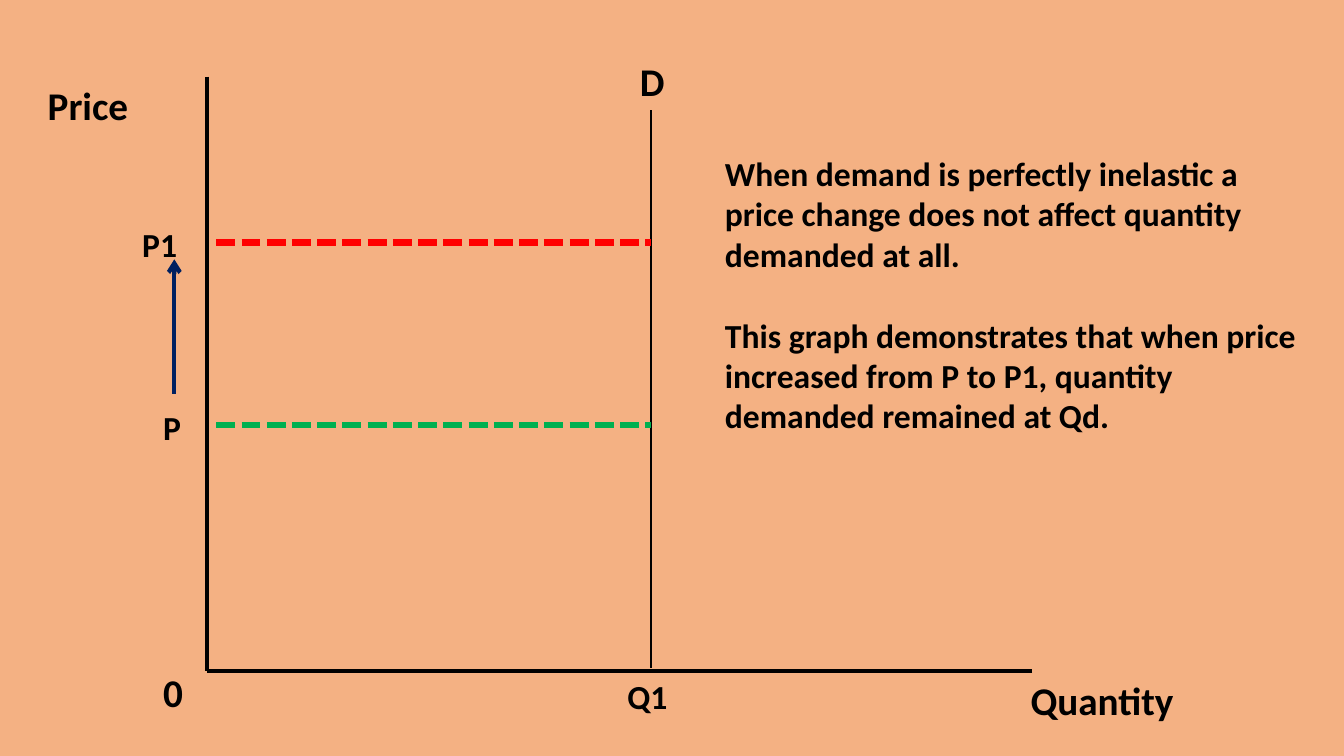
from lxml.etree import SubElement
from pptx import Presentation
from pptx.dml.color import RGBColor
from pptx.enum.dml import MSO_LINE
from pptx.enum.shapes import MSO_CONNECTOR
from pptx.enum.text import MSO_AUTO_SIZE
from pptx.oxml.ns import qn
from pptx.util import Pt

EMU_PER_PX = 9525  # slide is 1280 x 720 px

PEACH = RGBColor(0xF4, 0xB1, 0x83)
BLACK = RGBColor(0x00, 0x00, 0x00)
RED = RGBColor(0xFF, 0x00, 0x00)
GREEN = RGBColor(0x00, 0xB0, 0x50)
NAVY = RGBColor(0x00, 0x20, 0x60)

# Shared graph coordinates
AXIS_X, AXIS_Y = 197, 639
DEMAND_X = 620


def px(*lengths):
    return [length * EMU_PER_PX for length in lengths]


def add_line(slide, start, end, color, width, dash=None, arrow=False):
    connector = slide.shapes.add_connector(MSO_CONNECTOR.STRAIGHT, *px(*start, *end))
    line = connector.line
    line.color.rgb = color
    line.width = Pt(width)
    if dash:
        line.dash_style = dash
    if arrow:
        SubElement(line._get_or_add_ln(), qn("a:tailEnd"), type="arrow")
    SubElement(connector._element.spPr, qn("a:effectLst"))


def add_text(slide, box, paragraphs, size, gap=0):
    frame = slide.shapes.add_textbox(*px(*box)).text_frame
    frame.word_wrap = True
    frame.auto_size = MSO_AUTO_SIZE.SHAPE_TO_FIT_TEXT
    frame.text = "\n".join(paragraphs)
    for index, paragraph in enumerate(frame.paragraphs):
        font = paragraph.font
        font.name, font.size, font.bold = "Calibri", Pt(size), True
        font.color.rgb = BLACK
        if index:
            paragraph.space_before = Pt(gap)


def main():
    prs = Presentation()
    prs.slide_width, prs.slide_height = px(1280, 720)
    slide = prs.slides.add_slide(prs.slide_layouts[6])
    background = slide.background.fill
    background.solid()
    background.fore_color.rgb = PEACH

    # Axes and demand curve
    add_line(slide, (AXIS_X, 73), (AXIS_X, AXIS_Y), BLACK, 2.5)
    add_line(slide, (983, AXIS_Y), (AXIS_X, AXIS_Y), BLACK, 2.5)
    add_line(slide, (DEMAND_X, 105), (DEMAND_X, 636), BLACK, 2)

    # Price levels and the rise between them
    for level, color in ((231, RED), (405, GREEN)):
        add_line(slide, (206, level), (DEMAND_X, level), color, 4.5,
                 dash=MSO_LINE.SQUARE_DOT)
    add_line(slide, (166, 375), (166, 247), NAVY, 3, arrow=True)

    # Axis and curve labels
    for label, left, top, width in (
        ("Price", 36, 73, 151),
        ("Quantity", 972, AXIS_Y, 282),
        ("0", 146, 632, 40),
        ("D", 600, 50, 90),
    ):
        add_text(slide, (left, top, width, 55), [label], 28)

    # Price and quantity point labels
    for label, left, top, width in (
        ("P1", 126, 209, 70),
        ("P", 146, 383, 50),
        ("Q1", 588, AXIS_Y, 101),
    ):
        add_text(slide, (left, top, width, 48), [label], 24)

    # Explanation
    add_text(slide, (681, 141, 564, 281), [
        "When demand is perfectly inelastic a price change does not affect "
        "quantity demanded at all.",
        "This graph demonstrates that when price increased from P to P1, "
        "quantity demanded remained at Qd.",
    ], 24, gap=29)

    prs.save("out.pptx")


if __name__ == "__main__":
    main()
